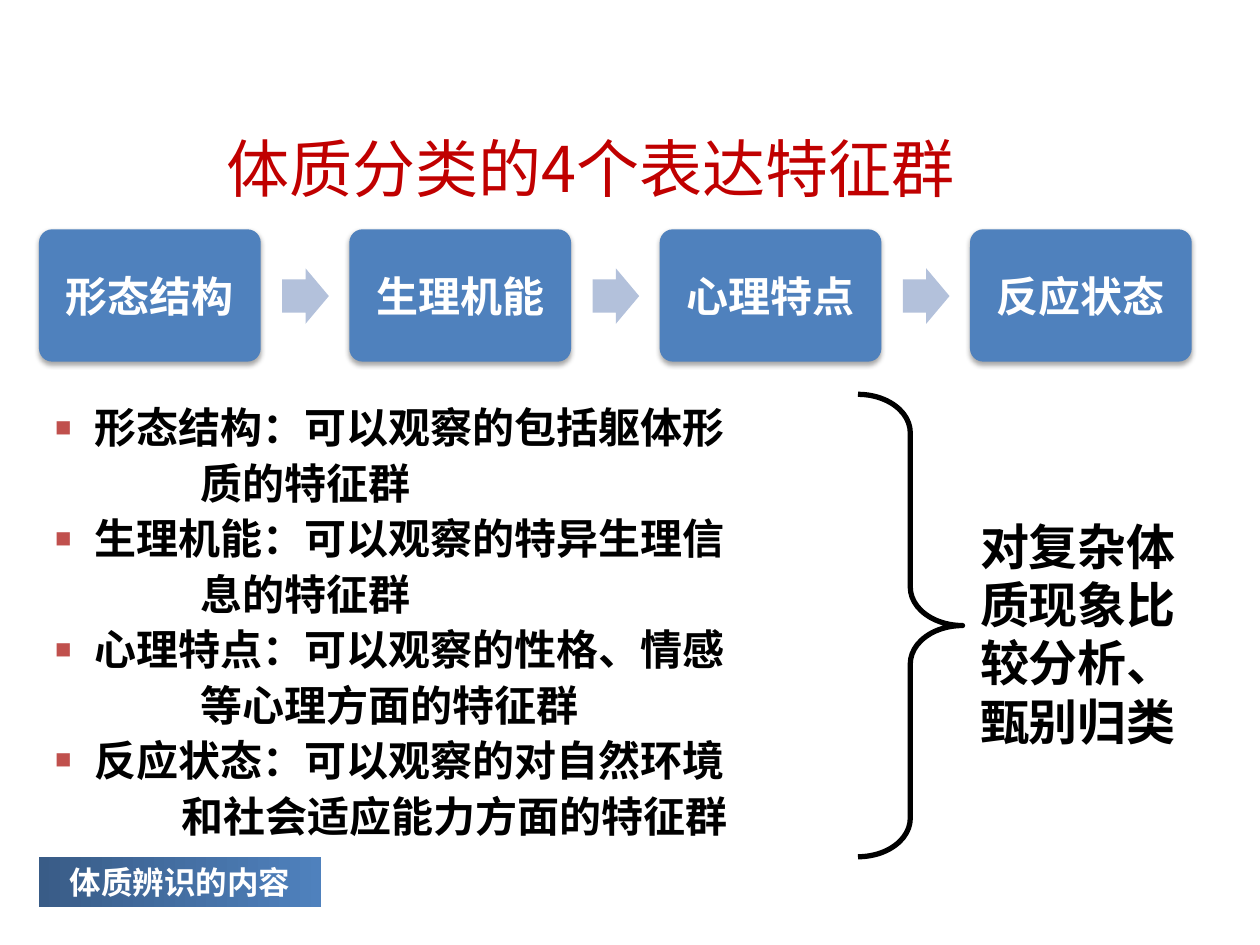
from pptx import Presentation
from pptx.dml.color import RGBColor
from pptx.enum.shapes import MSO_SHAPE
from pptx.enum.text import MSO_ANCHOR, PP_ALIGN
from pptx.oxml import parse_xml
from pptx.oxml.ns import nsdecls, qn
from pptx.util import Inches, Pt

ROUNDED, ARROW = MSO_SHAPE.ROUNDED_RECTANGLE, MSO_SHAPE.RIGHT_ARROW
BRACE, RECTANGLE = MSO_SHAPE.RIGHT_BRACE, MSO_SHAPE.RECTANGLE
MIDDLE, TOP = MSO_ANCHOR.MIDDLE, MSO_ANCHOR.TOP
CENTER, LEFT = PP_ALIGN.CENTER, PP_ALIGN.LEFT

CHINESE_FONT = "Noto Sans CJK SC"
STEP_FONT = "Noto Sans CJK JP"
BLUE, WHITE, BLACK = "4F81BD", "FFFFFF", "000000"

STEPS = ["形态结构", "生理机能", "心理特点", "反应状态"]
STEP_LEFT, STEP_PITCH = 0.31, 2.463
# First line, second line, indent of the second line
FEATURES = [
    ("形态结构：可以观察的包括躯体形", "质的特征群", 1.41),
    ("生理机能：可以观察的特异生理信", "息的特征群", 1.41),
    ("心理特点：可以观察的性格、情感", "等心理方面的特征群", 1.41),
    ("反应状态：可以观察的对自然环境", "和社会适应能力方面的特征群", 1.26),
]


def color(value):
    return RGBColor.from_string(value)


def format_paragraph(paragraph, size, value, bold=True, font=CHINESE_FONT,
                     asian_font=CHINESE_FONT, align=LEFT, spacing=None):
    paragraph.alignment = align
    paragraph.line_spacing = spacing
    for run in paragraph.runs:
        run.font.size = Pt(size)
        run.font.bold = bold
        run.font.name = font
        run.font.color.rgb = color(value)
        latin = run.font._element.find(qn("a:latin"))
        latin.addnext(parse_xml(
            f'<a:ea {nsdecls("a")} typeface="{asian_font}"/>'))


def add_text(slide, box, text, size, value, anchor=TOP, **style):
    shape = slide.shapes.add_textbox(*map(Inches, box))
    frame = shape.text_frame
    frame.word_wrap = True
    frame.vertical_anchor = anchor
    frame.text = text
    format_paragraph(frame.paragraphs[0], size, value, **style)


def add_shape(slide, kind, box, fill=None, adjustments=()):
    shape = slide.shapes.add_shape(kind, *map(Inches, box))
    shape.shadow.inherit = False
    shape.line.fill.background()
    if fill:
        shape.fill.solid()
        shape.fill.fore_color.rgb = color(fill)
    else:
        shape.fill.background()
    for index, adjustment in enumerate(adjustments):
        shape.adjustments[index] = adjustment
    return shape


def add_soft_shadow(shape):
    effects = shape._element.spPr.find(qn("a:effectLst"))
    effects.append(parse_xml(
        f'<a:outerShdw {nsdecls("a")} blurRad="{Pt(3.1)}" dist="{Pt(1.8)}" '
        'dir="5400000" rotWithShape="0"><a:srgbClr val="000000">'
        '<a:alpha val="35000"/></a:srgbClr></a:outerShdw>'))


def add_step(slide, left, label):
    shape = add_shape(slide, ROUNDED, (left, 1.82, 1.76, 1.05), BLUE, [0.1])
    add_soft_shadow(shape)
    frame = shape.text_frame
    frame.margin_left = frame.margin_right = Inches(0.1)
    frame.margin_top = frame.margin_bottom = Inches(0.1)
    frame.vertical_anchor = MIDDLE
    frame.text = label
    format_paragraph(frame.paragraphs[0], 24, WHITE, font=STEP_FONT,
                     asian_font=STEP_FONT, align=CENTER)


def indent(paragraph, margin, first_line=0, bullet=False):
    properties = paragraph._p.get_or_add_pPr()
    properties.set("marL", str(Inches(margin)))
    properties.set("indent", str(Inches(first_line)))
    if bullet:
        for item in ('<a:buClr {}><a:srgbClr val="C0504D"/></a:buClr>',
                     '<a:buSzPct {} val="65000"/>',
                     '<a:buFont {} typeface="Times New Roman"/>',
                     '<a:buChar {} char="■"/>'):
            properties.append(parse_xml(item.format(nsdecls("a"))))


def add_features(slide, box):
    shape = slide.shapes.add_textbox(*map(Inches, box))
    frame = shape.text_frame
    frame.word_wrap = True
    frame.text = "\n".join(line for feature in FEATURES for line in feature[:2])
    for paragraph in frame.paragraphs:
        format_paragraph(paragraph, 24, BLACK, spacing=Pt(31.7))
    pairs = zip(frame.paragraphs[::2], frame.paragraphs[1::2], FEATURES)
    for first, second, feature in pairs:
        indent(first, 0.57, -0.31, bullet=True)
        indent(second, feature[2])


def add_section_label(slide, box, text):
    shape = add_shape(slide, RECTANGLE, box)
    shape.fill.gradient()
    shape.fill.gradient_angle = 0
    for stop, value in zip(shape.fill.gradient_stops, ("395C87", BLUE)):
        stop.color.rgb = color(value)
    shape.text_frame.text = text
    format_paragraph(shape.text_frame.paragraphs[0], 18, WHITE,
                     font="Calibri", align=CENTER)


def main():
    presentation = Presentation()
    presentation.slide_width = Inches(10)
    presentation.slide_height = Inches(7.5)
    slide = presentation.slides.add_slide(presentation.slide_layouts[6])

    # Title
    add_text(slide, (0.78, 0.86, 7.81, 0.78), "体质分类的4个表达特征群", 36,
             "C00000", anchor=MIDDLE, bold=False, align=CENTER, spacing=1.25)

    # Row of steps with arrows between them
    for index, label in enumerate(STEPS):
        left = STEP_LEFT + index * STEP_PITCH
        add_step(slide, left, label)
        if index < len(STEPS) - 1:
            add_shape(slide, ARROW, (left + 1.93, 2.13, 0.37, 0.44),
                      "B3C1DB", [0.6, 0.5])

    # Features, brace and conclusion
    add_features(slide, (0.08, 3.1, 6.8, 3.61))
    brace = add_shape(slide, BRACE, (6.81, 3.13, 0.83, 3.67),
                      adjustments=[0.367, 0.5])
    brace.line.color.rgb = color(BLACK)
    brace.line.width = Pt(3)
    add_text(slide, (7.68, 4.05, 2.08, 1.97),
             "对复杂体质现象比较分析、甄别归类", 28, BLACK,
             font="Times New Roman", spacing=Pt(33.4))

    # Section label
    add_section_label(slide, (0.31, 6.8, 2.24, 0.4), "体质辨识的内容")

    presentation.save("out.pptx")


if __name__ == "__main__":
    main()
